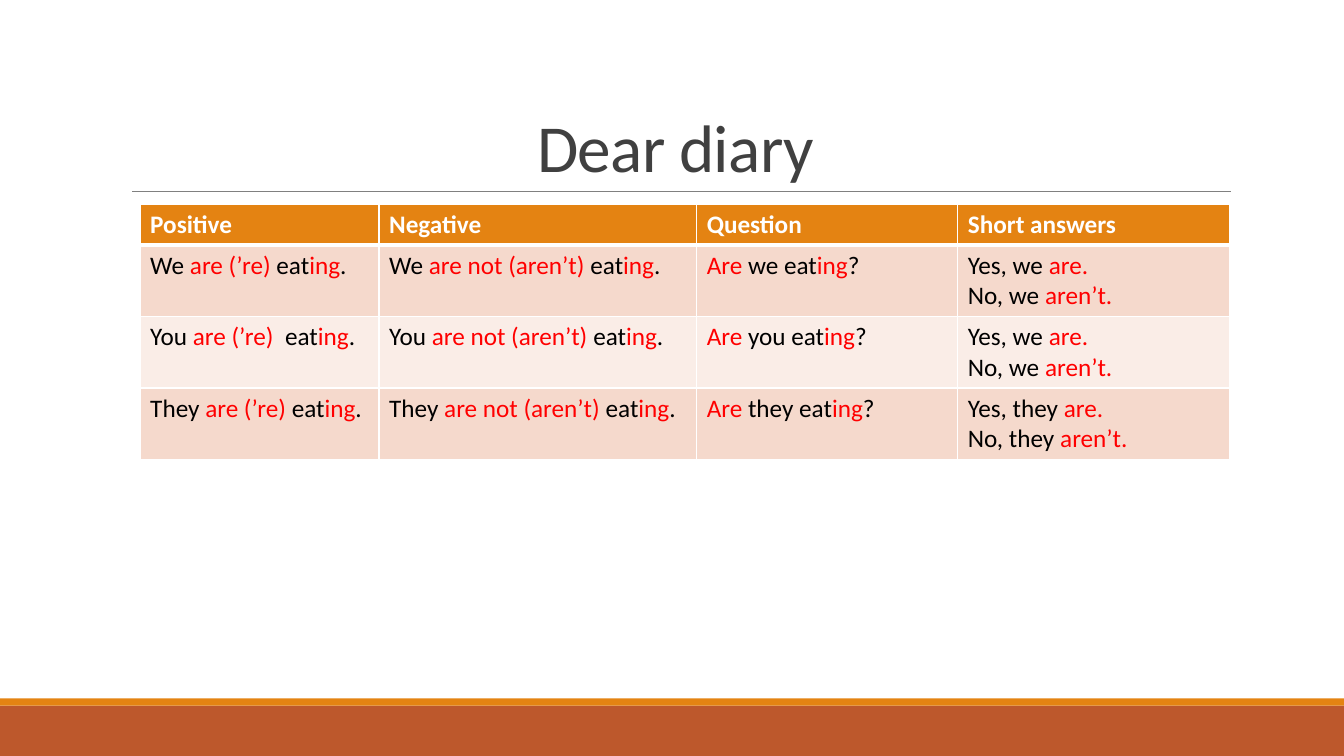
from dataclasses import dataclass

from lxml.etree import SubElement
from pptx import Presentation
from pptx.dml.color import RGBColor
from pptx.enum.shapes import MSO_CONNECTOR, MSO_SHAPE
from pptx.enum.text import MSO_ANCHOR, PP_ALIGN
from pptx.oxml.ns import qn
from pptx.util import Inches, Pt


@dataclass(frozen=True)
class Theme:
    font: str = "Calibri"
    rust: str = "BD582C"
    amber: str = "E48312"
    rule: str = "808080"
    title: str = "404040"
    white: str = "FFFFFF"
    black: str = "000000"
    red: str = "FF0000"
    bands: tuple = ("F5D9CC", "FAEDE7")
    head_size: int = 48
    body_size: int = 18


THEME = Theme()
WIDTH = 13.33
HEADS = ["Positive", "Negative", "Question", "Short answers"]
COLS = [2.37, 3.15, 2.59, 2.7]
ROWS = [0.4, 0.71, 0.71, 0.71]
# Text between bars is red.
VERBS = [
    ["We |are (’re) |eat|ing|.", "We |are not (aren’t) |eat|ing|.",
     "|Are| we eat|ing|?", "Yes, we |are.|\nNo, we |aren’t."],
    ["You |are (’re)  |eat|ing|.", "You |are not (aren’t) |eat|ing|.",
     "|Are |you eat|ing|?", "Yes, we |are.|\nNo, we |aren’t."],
    ["They |are (’re) |eat|ing|.", "They |are not (aren’t) |eat|ing|.",
     "|Are| they eat|ing|?", "Yes, they |are.|\nNo, they |aren’t."],
]


def paint(fill, color):
    fill.solid()
    fill.fore_color.rgb = RGBColor.from_string(color)


def add_run(para, text, size, color, bold=False):
    run = para.add_run()
    run.text = text
    font = run.font
    font.name, font.size, font.bold = THEME.font, Pt(size), bold
    font.color.rgb = RGBColor.from_string(color)
    return run


def add_bar(slide, top, height, color):
    bar = slide.shapes.add_shape(MSO_SHAPE.RECTANGLE, 0, Inches(top),
                                 Inches(WIDTH), Inches(height))
    bar.shadow.inherit = False
    paint(bar.fill, color)
    bar.line.fill.background()


def add_rule(slide, left, right, top):
    rule = slide.shapes.add_connector(MSO_CONNECTOR.STRAIGHT, Inches(left),
                                      Inches(top), Inches(right), Inches(top))
    rule.line.width = Pt(0.5)
    rule.line.color.rgb = RGBColor.from_string(THEME.rule)
    SubElement(rule._element.spPr, qn("a:effectLst"))


def add_title(slide, text):
    box = slide.shapes.add_textbox(Inches(1.2), Inches(0.31),
                                   Inches(11), Inches(1.59))
    frame = box.text_frame
    frame.word_wrap = True
    frame.vertical_anchor = MSO_ANCHOR.BOTTOM
    para = frame.paragraphs[0]
    para.alignment = PP_ALIGN.CENTER
    para.line_spacing = 0.85
    run = add_run(para, text, THEME.head_size, THEME.title)
    run.font._element.set("spc", "-50")


def add_edge(cell, side, width):
    props = cell._tc.get_or_add_tcPr()
    edge = SubElement(props, qn(f"a:ln{side}"), w=str(Pt(width)))
    fill = SubElement(edge, qn("a:solidFill"))
    SubElement(fill, qn("a:srgbClr"), val=THEME.white)


def style_cell(cell, row):
    for side in "LRTB":
        thick = (row, side) in ((0, "B"), (1, "T"))
        add_edge(cell, side, 3 if thick else 1)
    paint(cell.fill, THEME.bands[(row - 1) % 2] if row else THEME.amber)


def fill_cell(cell, text, head):
    frame = cell.text_frame
    for index, line in enumerate(text.split("\n")):
        para = frame.add_paragraph() if index else frame.paragraphs[0]
        parts = line.lstrip("\n").split("|")
        for place, part in enumerate(parts):
            if part:
                tone = THEME.red if place % 2 else THEME.black
                add_run(para, part, THEME.body_size,
                        THEME.white if head else tone, head)


def add_grid(slide, data):
    table = slide.shapes.add_table(len(data), len(COLS), Inches(1.39),
                                   Inches(2.03), Inches(sum(COLS)),
                                   Inches(sum(ROWS))).table
    for col, width in zip(table.columns, COLS):
        col.width = Inches(width)
    for row, height in zip(table.rows, ROWS):
        row.height = Inches(height)
    for row, texts in enumerate(data):
        for col, text in enumerate(texts):
            cell = table.cell(row, col)
            style_cell(cell, row)
            fill_cell(cell, text, row == 0)


def main():
    deck = Presentation()
    deck.slide_width, deck.slide_height = Inches(WIDTH), Inches(7.5)
    slide = deck.slides.add_slide(deck.slide_layouts[6])
    paint(slide.background.fill, THEME.white)
    add_bar(slide, 7, 0.5, THEME.rust)
    add_bar(slide, 6.93, 0.07, THEME.amber)
    add_rule(slide, 1.31, 12.21, 1.9)
    add_title(slide, "Dear diary")
    add_grid(slide, [HEADS] + VERBS)
    deck.save("out.pptx")


if __name__ == "__main__":
    main()
